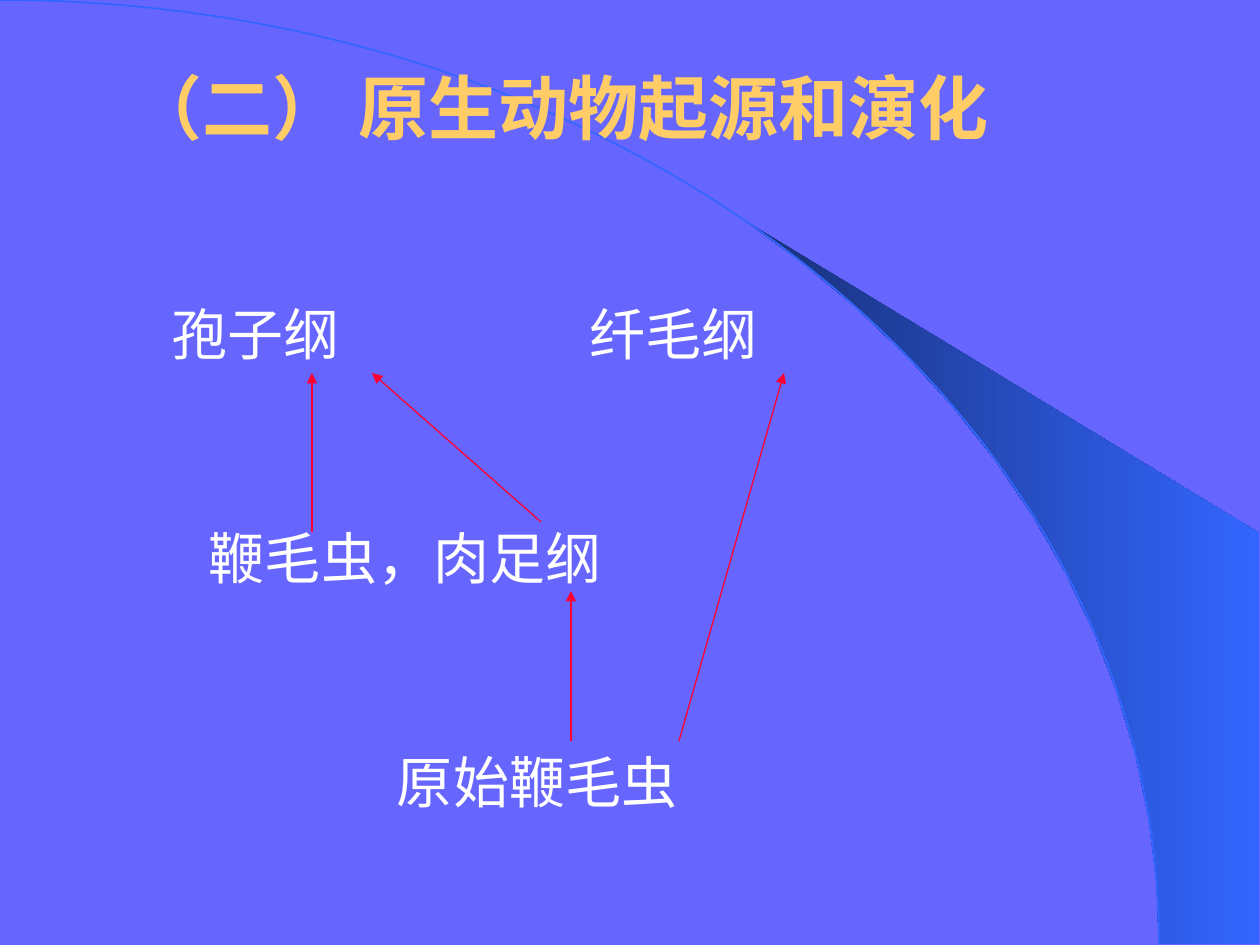
import math

from lxml import etree
from pptx import Presentation
from pptx import util as u
from pptx.dml.color import RGBColor
from pptx.enum import shapes, text
from pptx.oxml import ns

EMU_PER_PX = 914400 / 126
COLORS = {
    "background": "6666FF",
    "title": "FFCC66",
    "body": "FFFFFF",
    "arrow": "FF0033",
    "arc": "3366FF",
    "wedge_dark": "182F76",
}
ARC_WIDTH, ARC_HEIGHT = 1159, 944
ARC_CONTROLS = [(640, 0), (1159, 422)]
BODY_LEFT, BODY_TOP, BODY_INSET, FIRST_LINE = 84, 214, 13, 72
# Left edge in px and name of the group on each level.
LEVELS = [(172, "孢子纲"), (209, "鞭毛虫，肉足纲"), (397, "原始鞭毛虫")]
ARROWS = [
    ((571, 741), (571, 591)),
    ((541, 522), (372, 373)),
    ((312, 532), (312, 373)),
    ((679, 741), (784, 373)),
]


def px(length):
    return u.Emu(round(length * EMU_PER_PX))


def color(name):
    return RGBColor.from_string(COLORS[name])


def arc_points(start_x, steps):
    """Points of the quarter ellipse from start_x to its right end."""
    first = math.asin(start_x / ARC_WIDTH)
    angles = [first + (math.pi / 2 - first) * i / steps for i in range(steps + 1)]
    return [(ARC_WIDTH * math.sin(a), ARC_HEIGHT * (1 - math.cos(a))) for a in angles]


def add_outline(page, points, close):
    corners = [(px(x), px(y)) for x, y in points]
    builder = page.shapes.build_freeform(*corners[0], scale=1.0)
    builder.add_line_segments(corners[1:], close=close)
    shape = builder.convert_to_shape()
    shape.shadow.inherit = False
    return shape


def bend(shape, controls):
    """Turn the single straight segment of a freeform into a Bézier curve."""
    segment = next(shape.element.iter(ns.qn("a:lnTo")))
    curve = etree.Element(ns.qn("a:cubicBezTo"))
    for x, y in controls:
        etree.SubElement(curve, ns.qn("a:pt"), x=str(int(px(x))), y=str(int(px(y))))
    curve.append(segment[0])
    segment.getparent().replace(segment, curve)


def add_backdrop(page):
    """Draw the shaded wedge and the arc behind the placeholders."""
    wedge = add_outline(page, arc_points(742, 13) + [(1259, 944), (1259, 533)], True)
    wedge.fill.gradient()
    wedge.fill.gradient_angle = 0
    for stop, name in zip(wedge.fill.gradient_stops, ("wedge_dark", "arc")):
        stop.color.rgb = color(name)
    wedge.line.fill.background()

    arc = add_outline(page, [(0, 0), (ARC_WIDTH, ARC_HEIGHT)], False)
    bend(arc, ARC_CONTROLS)
    arc.fill.background()
    arc.line.color.rgb = color("arc")
    arc.line.width = u.Pt(1)

    tree = wedge.element.getparent()
    for index, shape in enumerate((wedge, arc), start=2):
        tree.insert(index, shape.element)


def place(box, left, top, width, height):
    box.left, box.top, box.width, box.height = map(px, (left, top, width, height))
    box.text_frame.word_wrap = True
    box.text_frame.auto_size = text.MSO_AUTO_SIZE.NONE


def add_run(para, words, font, size, color_name, bold=False):
    span = para.add_run()
    span.text = words
    span.font.name = font
    span.font.size = u.Pt(size)
    span.font.bold = bold
    span.font.color.rgb = color(color_name)


def fill_title(box):
    place(box, 84, 56, 953, 101)
    box.text_frame.vertical_anchor = text.MSO_ANCHOR.MIDDLE
    para = box.text_frame.paragraphs[0]
    para.alignment = text.PP_ALIGN.CENTER
    add_run(para, "（二） 原生动物起源和演化", "Arial", 40, "title", bold=True)


def write_group(para, name, indent=0, gap=0):
    """Write a group name without bullet, indented by px, after a gap in points."""
    props = para._p.get_or_add_pPr()
    props.set("marL", str(int(px(indent))))
    props.set("indent", "0")
    etree.SubElement(props, ns.qn("a:buNone"))
    para.alignment = text.PP_ALIGN.LEFT
    para.line_spacing = u.Pt(46)
    para.space_before = u.Pt(gap)
    add_run(para, name, "Times New Roman", 32, "body")


def fill_body(box):
    place(box, BODY_LEFT, BODY_TOP, 1071, 645)
    frame = box.text_frame
    frame.vertical_anchor = text.MSO_ANCHOR.TOP
    frame.margin_left = px(BODY_INSET)
    frame.margin_top = px(FIRST_LINE)
    for index, (left, name) in enumerate(LEVELS):
        para = frame.add_paragraph() if index else frame.paragraphs[0]
        write_group(para, name, left - BODY_LEFT - BODY_INSET, 82 if index else 0)


def add_ciliates(page):
    """Place the second group of the top level beside the first."""
    box = page.shapes.add_textbox(0, 0, 0, 0)
    place(box, 590, BODY_TOP + FIRST_LINE, 200, 81)
    frame = box.text_frame
    frame.margin_left = frame.margin_top = 0
    write_group(frame.paragraphs[0], "纤毛纲")


def add_arrow(page, start, end):
    arrow = page.shapes.add_connector(
        shapes.MSO_CONNECTOR.STRAIGHT, *map(px, start + end))
    arrow.line.color.rgb = color("arrow")
    arrow.line.width = u.Pt(0.75)
    etree.SubElement(arrow.line._get_or_add_ln(), ns.qn("a:tailEnd"), type="triangle")
    etree.SubElement(arrow.element.spPr, ns.qn("a:effectLst"))


def main():
    deck = Presentation()
    deck.slide_width, deck.slide_height = px(1260), px(945)
    page = deck.slides.add_slide(deck.slide_layouts[1])
    page.background.fill.solid()
    page.background.fill.fore_color.rgb = color("background")
    add_backdrop(page)
    fill_title(page.shapes.title)
    fill_body(page.placeholders[1])
    add_ciliates(page)
    for start, end in ARROWS:
        add_arrow(page, start, end)
    deck.save("out.pptx")


if __name__ == "__main__":
    main()
